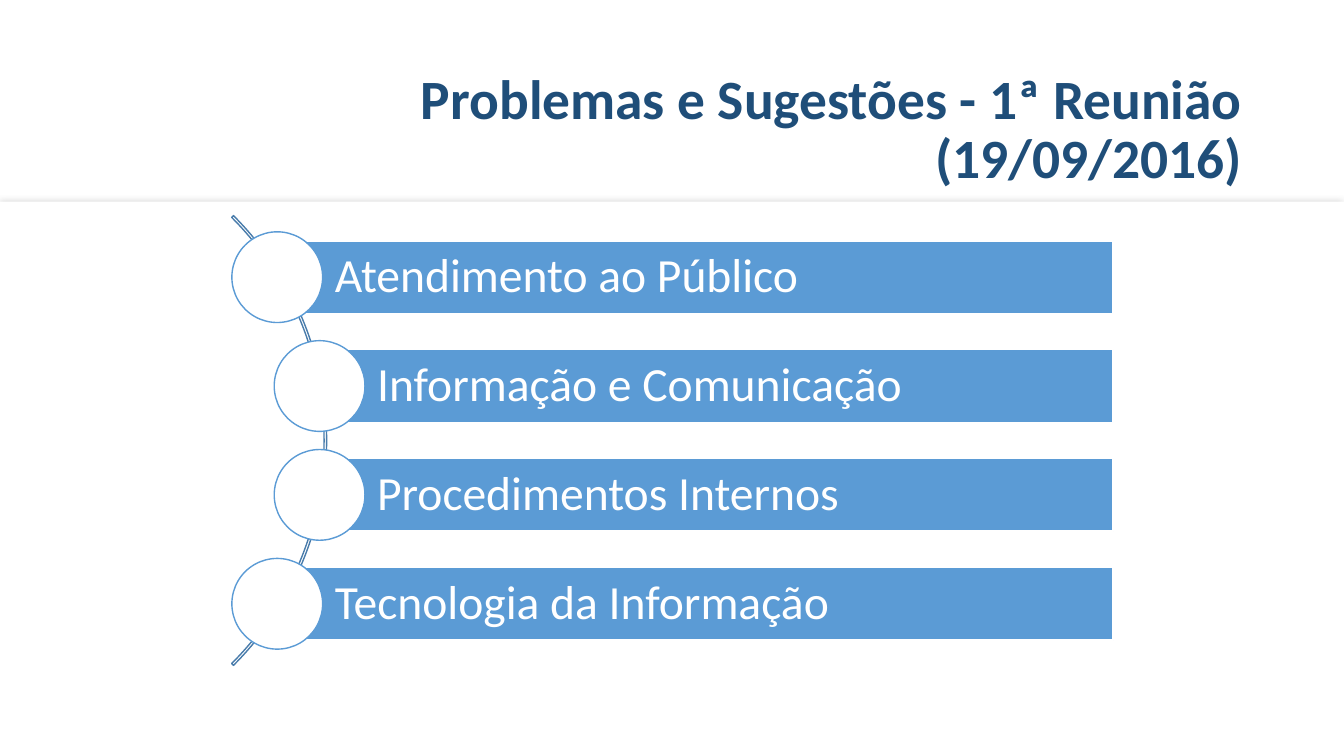
from lxml import etree
from pptx import Presentation
from pptx.dml.color import RGBColor
from pptx.enum.shapes import MSO_SHAPE as SHAPE
from pptx.enum.text import MSO_ANCHOR as ANCHOR, MSO_AUTO_SIZE as AUTO_SIZE, PP_ALIGN as ALIGN
from pptx.oxml import parse_xml
from pptx.oxml.ns import nsdecls
from pptx.util import Inches, Pt

WHITE = RGBColor(0xFF, 0xFF, 0xFF)
NAVY = RGBColor(0x1F, 0x4E, 0x79)
BLUE = RGBColor(0x5B, 0x9B, 0xD5)
ARC_BLUE = RGBColor(0x49, 0x7C, 0xAB)

TOPICS = [
    ("Atendimento ao Público", 0),
    ("Informação e Comunicação", 0.42),
    ("Procedimentos Internos", 0.42),
    ("Tecnologia da Informação", 0),
]


def write(tf, text, size, color, bold=False, align=ALIGN.LEFT):
    tf.word_wrap = True
    tf.auto_size = AUTO_SIZE.NONE
    tf.vertical_anchor = ANCHOR.MIDDLE
    p = tf.paragraphs[0]
    p.alignment = align
    p.line_spacing = 0.9
    r = p.add_run()
    r.text = text
    r.font.name = "Calibri"
    r.font.size = Pt(size)
    r.font.bold = bold
    r.font.color.rgb = color


def add_shape(s, kind, x, y, w, h, fill=None, line=None):
    sp = s.shapes.add_shape(kind, Inches(x), Inches(y), Inches(w), Inches(h))
    sp.shadow.inherit = False
    if fill is None:
        sp.fill.background()
    else:
        sp.fill.solid()
        sp.fill.fore_color.rgb = fill
    if line is None:
        sp.line.fill.background()
    else:
        sp.line.color.rgb = line
        sp.line.width = Pt(1)
    return sp


def add_panel(s, x, y, w, h):
    sp = add_shape(s, SHAPE.RECTANGLE, x, y, w, h, WHITE)
    effects = sp._element.spPr.find("{*}effectLst")
    shadow = parse_xml(
        f'<a:outerShdw {nsdecls("a")} blurRad="{Pt(5)}" dist="0" dir="0" algn="ctr" rotWithShape="0">'
        '<a:srgbClr val="A6A6A6"><a:alpha val="42000"/></a:srgbClr></a:outerShdw>'
    )
    effects.append(shadow)


def add_title(s, x, y, w, h):
    title = s.shapes.title
    title.left, title.top = Inches(x), Inches(y)
    title.width, title.height = Inches(w), Inches(h)
    write(title.text_frame, "Problemas e Sugestões - 1ª Reunião (19/09/2016)",
          39.6, NAVY, bold=True, align=ALIGN.RIGHT)


def add_topic(s, text, x, y, w, h):
    bar = add_shape(s, SHAPE.RECTANGLE, x, y, w, h, BLUE, WHITE)
    tf = bar.text_frame
    tf.margin_left = Inches(0.57)
    tf.margin_right = tf.margin_top = tf.margin_bottom = Inches(0.09)
    write(tf, text, 34, WHITE)
    size = 1.25 * h
    add_shape(s, SHAPE.OVAL, x - size / 2, y + (h - size) / 2, size, size, WHITE, BLUE)


def add_topic_list(s, x, y, w, h):
    diameter = 6.31
    arc = add_shape(s, SHAPE.BLOCK_ARC, x - 5.82, y + (h - diameter) / 2,
                    diameter, diameter, line=ARC_BLUE)
    for i, value in enumerate((189, 27, 0.004)):
        arc.adjustments[i] = value
    bar_h = 0.72
    pitch = (h - bar_h) / (len(TOPICS) - 1)
    for i, (text, indent) in enumerate(TOPICS):
        add_topic(s, text, x + indent, y + i * pitch, w - indent, bar_h)


def main():
    prs = Presentation()
    prs.slide_width, prs.slide_height = Inches(13.33), Inches(7.5)
    s = prs.slides.add_slide(prs.slide_layouts[5])
    add_panel(s, 0, 2, 13.33, 5.5)
    add_title(s, 0.92, 0.64, 11.5, 1.32)
    add_topic_list(s, 2.75, 2.39, 8.29, 3.96)
    prs.save("out.pptx")


if __name__ == "__main__":
    main()
